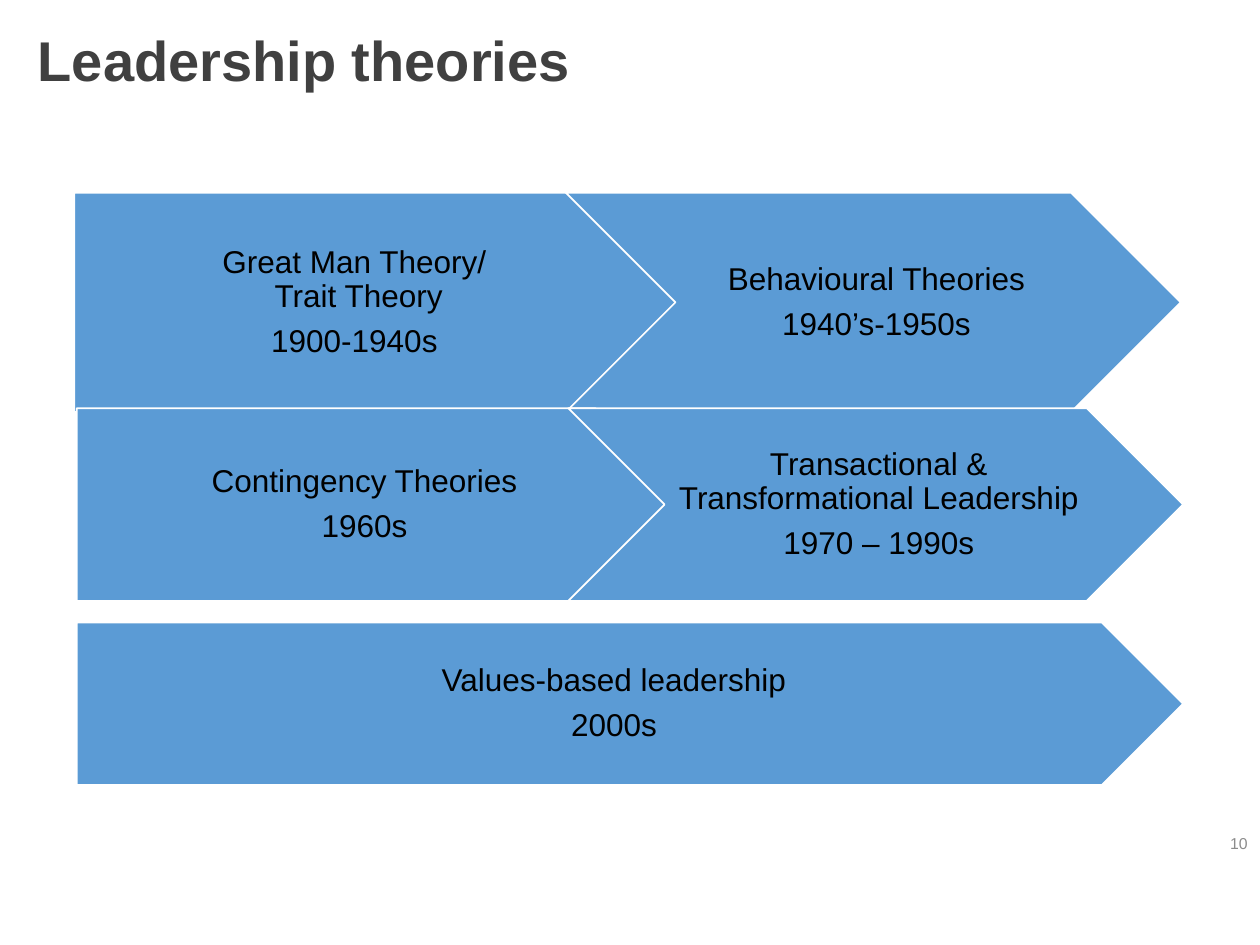
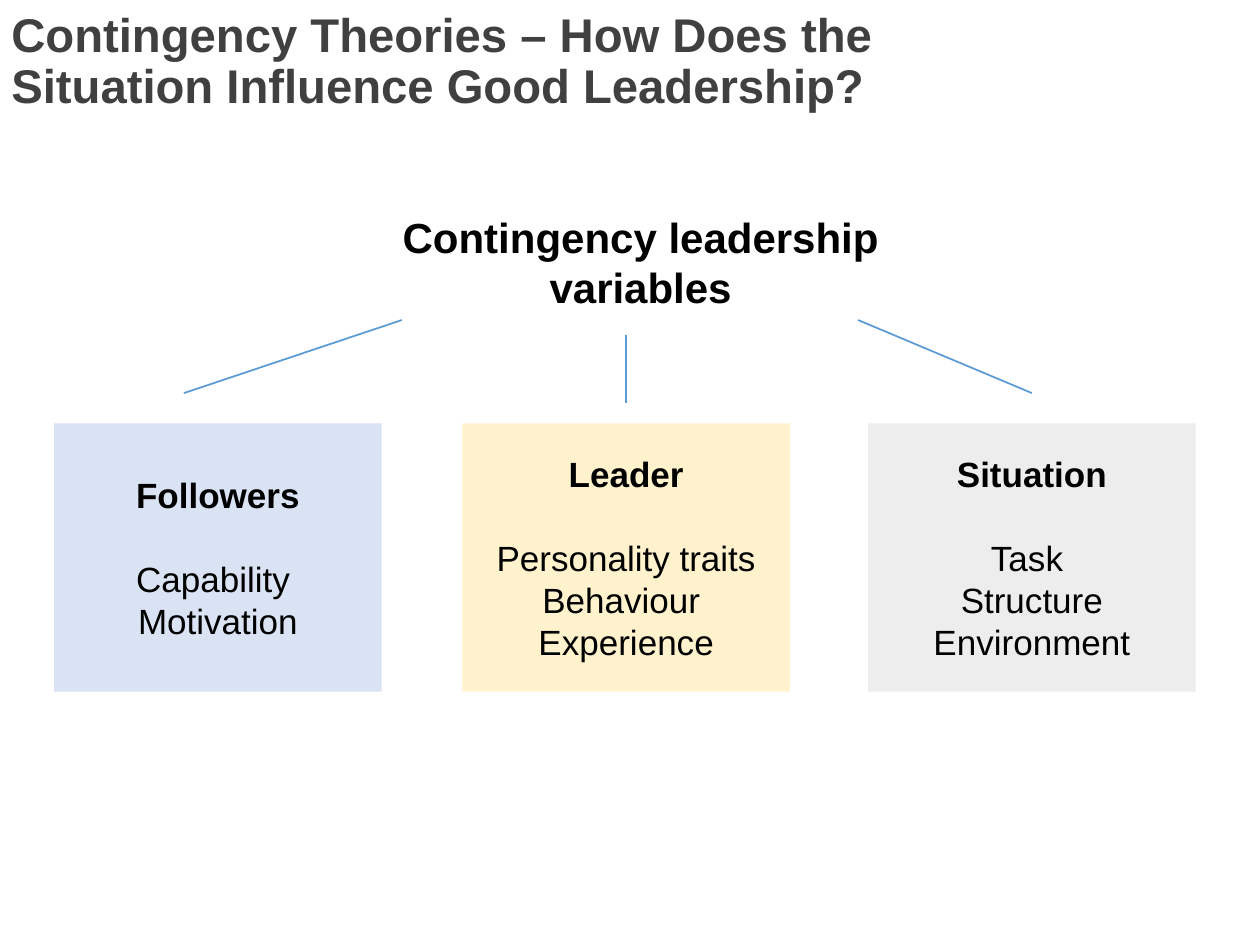
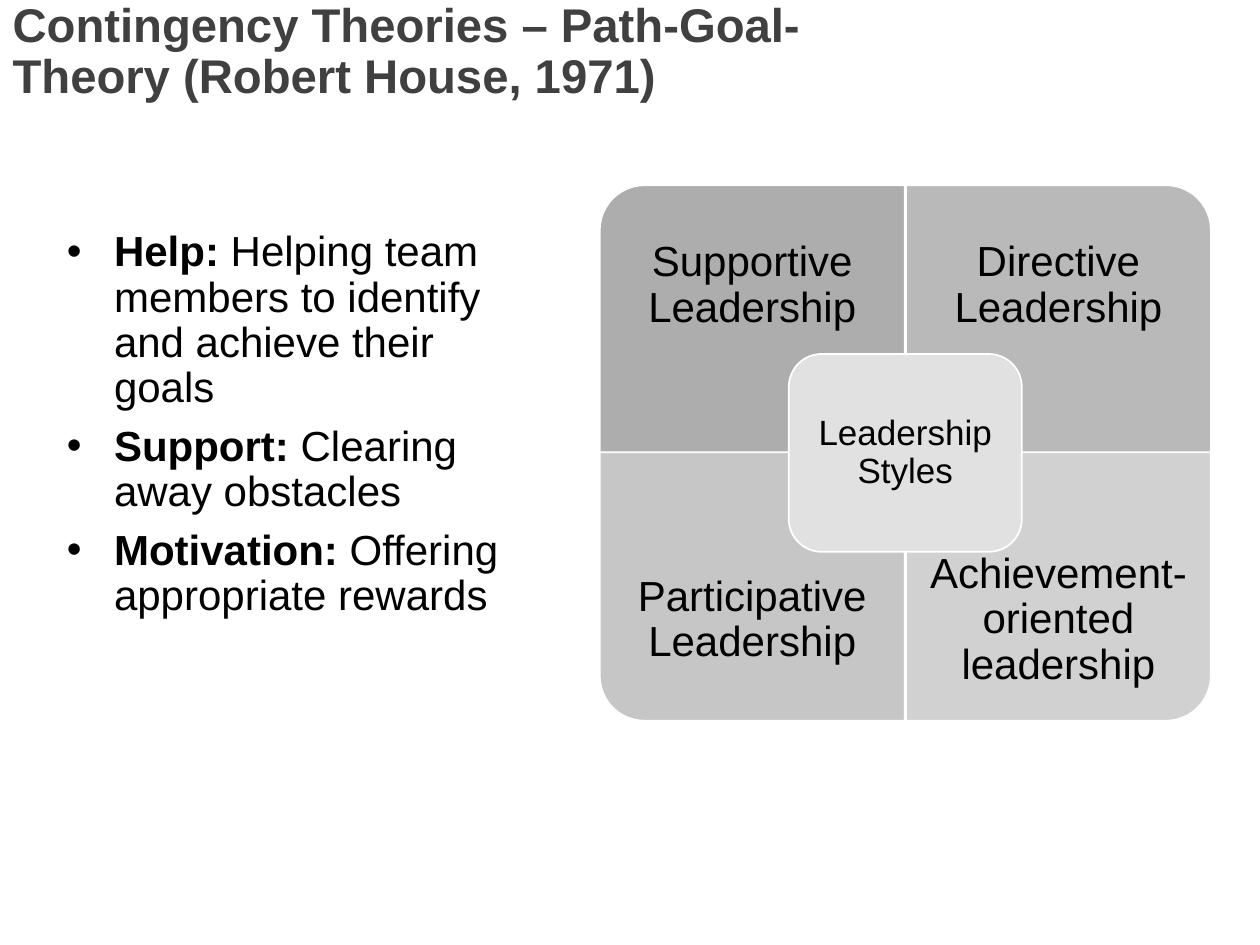
from pptx import Presentation
from pptx.dml.color import RGBColor
from pptx.enum.shapes import MSO_CONNECTOR, MSO_SHAPE
from pptx.enum.text import MSO_ANCHOR, MSO_AUTO_SIZE, PP_ALIGN
from pptx.oxml.ns import qn
from pptx.util import Inches, Pt
from lxml.etree import SubElement

# Shared colours and fonts
FONT = "Arial"
TITLE_GREY = RGBColor(0x40, 0x40, 0x40)
NUMBER_GREY = RGBColor(0x8C, 0x8C, 0x8C)
QUADRANT_GREY = RGBColor(0xA5, 0xA5, 0xA5)
CENTRE_GREY = RGBColor(0xE1, 0xE1, 0xE1)
BLACK = RGBColor(0x00, 0x00, 0x00)
WHITE = RGBColor(0xFF, 0xFF, 0xFF)
BLUE = RGBColor(0x5B, 0x9B, 0xD5)
PALE_BLUE = RGBColor(0xDA, 0xE3, 0xF3)
PALE_YELLOW = RGBColor(0xFF, 0xF2, 0xCC)
PALE_GREY = RGBColor(0xED, 0xED, 0xED)

# Paragraph formats
DIAGRAM = {"alignment": PP_ALIGN.CENTER, "line_spacing": 0.9}
CENTRED = {"alignment": PP_ALIGN.CENTER}
BULLET = {"line_spacing": 0.9}
TITLE = {"alignment": PP_ALIGN.LEFT, "line_spacing": 0.9}

TITLE_ONLY, TITLE_AND_CONTENT = 5, 1


def set_attrs(obj, values):
    for name, value in values.items():
        setattr(obj, name, value)


def place(sp, left, top, width, height):
    set_attrs(sp, {"left": Inches(left), "top": Inches(top),
                   "width": Inches(width), "height": Inches(height)})


def set_frame(tf, insets=(0.1, 0.05, 0.1, 0.05), anchor=MSO_ANCHOR.MIDDLE):
    sides = ("margin_left", "margin_top", "margin_right", "margin_bottom")
    set_attrs(tf, dict(zip(sides, map(Inches, insets))))
    set_attrs(tf, {"word_wrap": True, "auto_size": MSO_AUTO_SIZE.NONE,
                   "vertical_anchor": anchor})


def style_run(r, size, color=BLACK, bold=False):
    set_attrs(r.font, {"name": FONT, "size": Pt(size), "bold": bold})
    r.font.color.rgb = color


def write(tf, lines, size, para, color=BLACK, bold=False):
    for i, line in enumerate(lines):
        p = tf.add_paragraph() if i else tf.paragraphs[0]
        p.text = line
        set_attrs(p, para)
        for r in p.runs:
            style_run(r, size, color, bold)


def add_slide(prs, layout, title, left, top, size):
    slide = prs.slides.add_slide(prs.slide_layouts[layout])
    sp = slide.shapes.title
    place(sp, left, top, 8.5, 0.58)
    set_frame(sp.text_frame)
    write(sp.text_frame, [title], size, TITLE, TITLE_GREY, True)
    return slide


def add_box(slide, kind, box, fill, line=None, alpha=None):
    sp = slide.shapes.add_shape(kind, *map(Inches, box))
    sp.shadow.inherit = False
    sp.fill.solid()
    sp.fill.fore_color.rgb = fill
    if alpha:
        clr = sp.fill._xPr.find(qn("a:solidFill")).find(qn("a:srgbClr"))
        SubElement(clr, qn("a:alpha")).set("val", str(alpha * 1000))
    if line is None:
        sp.line.fill.background()
    else:
        sp.line.color.rgb = line
        sp.line.width = Pt(1)
    return sp


def add_text(slide, box, lines, size, para, color=BLACK, bold=False, **frame):
    sp = slide.shapes.add_textbox(*map(Inches, box))
    set_frame(sp.text_frame, **frame)
    write(sp.text_frame, lines, size, para, color, bold)


def add_line(slide, x1, y1, x2, y2):
    ln = slide.shapes.add_connector(MSO_CONNECTOR.STRAIGHT,
                                    *map(Inches, (x1, y1, x2, y2)))
    ln.line.color.rgb = BLUE
    ln.line.width = Pt(1)
    SubElement(ln._element.spPr, qn("a:effectLst"))


def add_arrow(slide, kind, box, lines):
    sp = add_box(slide, kind, box, BLUE, WHITE)
    left_inset = 0.08 if kind == MSO_SHAPE.CHEVRON else 0.1
    set_frame(sp.text_frame, (left_inset, 0.05, 0.03, 0.05))
    write(sp.text_frame, lines, 18, {**DIAGRAM, "space_after": Pt(6.3)})


def add_variable(slide, left, fill, heading, items):
    sp = add_box(slide, MSO_SHAPE.RECTANGLE, (left, 3.36, 2.6, 2.13), fill)
    set_frame(sp.text_frame)
    write(sp.text_frame, [heading, *items], 20, CENTRED)
    head = sp.text_frame.paragraphs[0]
    head.space_after = Pt(24)
    head.runs[0].font.bold = True


def add_quadrant(slide, row, col, rotation, alpha, text):
    width, height = 2.42, 2.13
    left, top = 4.76 + col * 2.43, 1.47 + row * 2.12
    # A quarter turn swaps the sides around the same centre
    w, h = (height, width) if rotation % 180 else (width, height)
    box = (left + (width - w) / 2, top + (height - h) / 2, w, h)
    sp = add_box(slide, MSO_SHAPE.ROUND_1_RECTANGLE, box, QUADRANT_GREY, WHITE, alpha)
    sp.rotation = rotation
    text_height = 0.75 * height
    text_top = top + row * (height - text_height)
    add_text(slide, (left, text_top, width, text_height), [text], 24,
             {**DIAGRAM, "space_after": Pt(8.4)}, insets=(0.19,) * 4)


def add_bullets(slide, items):
    sp = slide.placeholders[1]
    place(sp, 0.43, 1.78, 3.86, 4.96)
    tf = sp.text_frame
    set_frame(tf, anchor=MSO_ANCHOR.TOP)
    for i, (term, meaning) in enumerate(items):
        p = tf.add_paragraph() if i else tf.paragraphs[0]
        set_attrs(p, {**BULLET, "space_before": Pt(7.5 if i else 0)})
        for text, bold in ((term, True), (meaning, False)):
            r = p.add_run()
            r.text = text
            style_run(r, 24, bold=bold)


def build_theories(prs):
    slide = add_slide(prs, TITLE_ONLY, "Leadership theories", 0.2, 0.21, 32)
    add_text(slide, (9.51, 6.55, 0.49, 0.29), ["10"], 9,
             {"alignment": PP_ALIGN.RIGHT}, NUMBER_GREY)
    rows = [
        (0.59, 1.53, 1.74, ["Great Man Theory/ \nTrait Theory", "1900-1940s "],
         ["Behavioural Theories", "1940’s-1950s"]),
        (0.61, 3.24, 1.53, ["Contingency Theories", "1960s"],
         ["Transactional & Transformational Leadership", "1970 – 1990s"]),
    ]
    for left, top, height, first, second in rows:
        add_arrow(slide, MSO_SHAPE.PENTAGON, (left, top, 4.88, height), first)
        add_arrow(slide, MSO_SHAPE.CHEVRON, (left + 3.9, top, 4.88, height), second)
    add_arrow(slide, MSO_SHAPE.PENTAGON, (0.61, 4.94, 8.78, 1.29),
              ["Values-based leadership", "2000s"])


def build_variables(prs):
    slide = add_slide(prs, TITLE_ONLY, "Contingency Theories – How Does the "
                      "Situation Influence Good Leadership?", -0.01, 0.21, 27)
    variables = [
        (0.43, PALE_BLUE, "Followers", ["Capability ", "Motivation"]),
        (3.67, PALE_YELLOW, "Leader",
         ["Personality traits", "Behaviour ", "Experience"]),
        (6.89, PALE_GREY, "Situation", ["Task ", "Structure", "Environment"]),
    ]
    for variable in variables:
        add_variable(slide, *variable)
    add_text(slide, (2.8, 1.63, 4.57, 0.91), ["Contingency leadership variables"],
             24, CENTRED, bold=True, anchor=MSO_ANCHOR.TOP)
    for ends in ((1.46, 3.12, 3.19, 2.54), (4.97, 2.66, 4.97, 3.2),
                 (6.81, 2.54, 8.19, 3.12)):
        add_line(slide, *ends)


def build_path_goal(prs):
    slide = add_slide(prs, TITLE_AND_CONTENT, "Contingency Theories – Path-Goal-\n"
                      "Theory (Robert House, 1971)", 0, 0.13, 27)
    add_bullets(slide, [
        ("Help: ", "Helping team members to identify and achieve their goals"),
        ("Support: ", "Clearing away obstacles"),
        ("Motivation: ", "Offering appropriate rewards"),
    ])
    # Row, column, rotation, opacity in percent, style
    quadrants = [
        (0, 0, 270, 90, "Supportive Leadership"),
        (0, 1, 0, 77, "Directive Leadership"),
        (1, 0, 180, 63, "Participative Leadership"),
        (1, 1, 90, 50, "Achievement-oriented leadership"),
    ]
    for quadrant in quadrants:
        add_quadrant(slide, *quadrant)
    sp = add_box(slide, MSO_SHAPE.ROUNDED_RECTANGLE, (6.26, 2.81, 1.85, 1.57),
                 CENTRE_GREY, WHITE)
    set_frame(sp.text_frame, (0.08,) * 4)
    write(sp.text_frame, ["Leadership Styles"], 20, {**DIAGRAM, "space_after": Pt(7)})


def main():
    prs = Presentation()
    prs.slide_width, prs.slide_height = Inches(10), Inches(7.5)
    build_theories(prs)
    build_variables(prs)
    build_path_goal(prs)
    prs.save("out.pptx")


if __name__ == "__main__":
    main()
